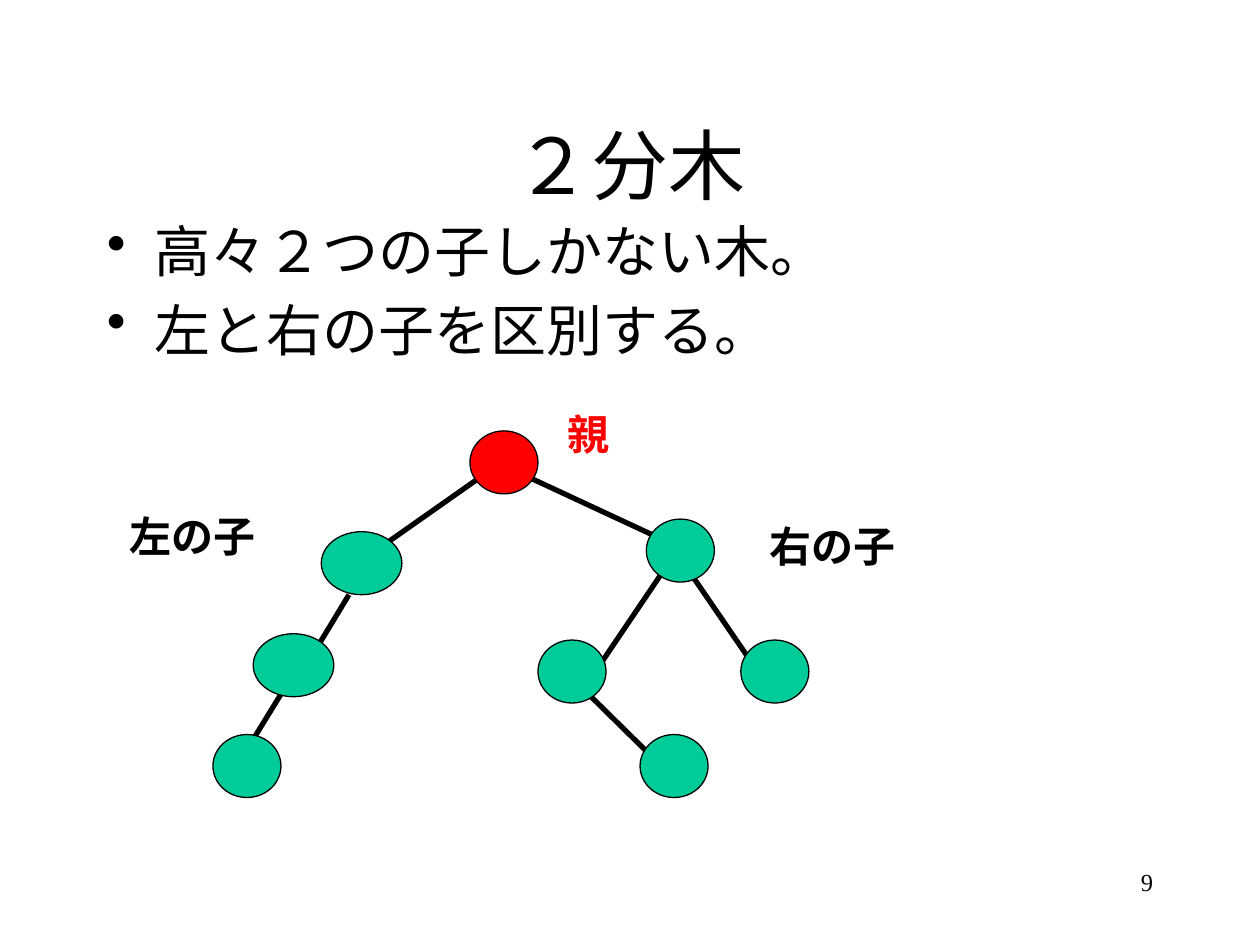
"""Build a slide that explains binary trees with a small example tree."""
from lxml.etree import SubElement
from pptx import Presentation
from pptx.dml.color import RGBColor
from pptx.enum.shapes import MSO_CONNECTOR, MSO_SHAPE
from pptx.enum.text import MSO_ANCHOR, PP_ALIGN
from pptx.oxml.ns import qn
from pptx.util import Inches, Pt

FONT = "Times New Roman"
BLACK, RED, GREEN = "000000", "FF0000", "00CC99"
NODE_HEIGHT, NARROW, WIDE = 0.5, 0.54, 0.64

TITLE = "２分木"
BULLETS = ["高々２つの子しかない木。", "左と右の子を区別する。"]
PAGE_NUMBER = "9"
NODES = [
    (3.73, 3.42, NARROW, RED),
    (2.55, 4.22, WIDE, GREEN),
    (5.13, 4.12, NARROW, GREEN),
    (2.01, 5.03, WIDE, GREEN),
    (1.69, 5.83, NARROW, GREEN),
    (4.27, 5.08, NARROW, GREEN),
    (5.88, 5.08, NARROW, GREEN),
    (5.08, 5.83, NARROW, GREEN),
]
EDGES = [
    (4.05, 3.62, 2.77, 4.52),
    (4.05, 3.72, 5.34, 4.32),
    (2.77, 4.72, 2.34, 5.43),
    (2.34, 5.33, 1.91, 6.03),
    (5.34, 4.42, 4.59, 5.53),
    (5.33, 4.33, 6.09, 5.44),
    (4.58, 5.42, 5.25, 6.08),
]
LABELS = [
    ("親", 4.4, 3.19, 0.54, RED),
    ("左の子", 0.92, 4, 1.21, BLACK),
    ("右の子", 6, 4.08, 1.21, BLACK),
]


def color(value):
    return RGBColor.from_string(value)


def add_text(slide, lines, box, size, align, text_color=BLACK, bold=False, wrap=True):
    shape = slide.shapes.add_textbox(*map(Inches, box))
    text_frame = shape.text_frame
    text_frame.word_wrap = wrap
    text_frame.text = "\n".join(lines)
    for paragraph in text_frame.paragraphs:
        paragraph.alignment = align
        for run in paragraph.runs:
            run.font.name = FONT
            run.font.size = Pt(size)
            run.font.bold = bold
            run.font.color.rgb = color(text_color)
    return text_frame


def add_bullets(text_frame):
    for index, paragraph in enumerate(text_frame.paragraphs):
        if index:
            paragraph.space_before = Pt(6.4)
        properties = paragraph._p.get_or_add_pPr()
        properties.set("marL", str(Inches(0.38)))
        properties.set("indent", str(Inches(-0.38)))
        SubElement(properties, qn("a:buChar"), char="•")


def add_edge(slide, points):
    connector = slide.shapes.add_connector(MSO_CONNECTOR.STRAIGHT, *map(Inches, points))
    connector.line.color.rgb = color(BLACK)
    connector.line.width = Pt(3)
    SubElement(connector._element.spPr, qn("a:effectLst"))


def add_node(slide, left, top, width, fill):
    box = (left, top, width, NODE_HEIGHT)
    shape = slide.shapes.add_shape(MSO_SHAPE.OVAL, *map(Inches, box))
    shape.shadow.inherit = False
    shape.fill.solid()
    shape.fill.fore_color.rgb = color(fill)
    shape.line.color.rgb = color(BLACK)
    shape.line.width = Pt(0.75)


def main():
    presentation = Presentation()
    presentation.slide_width, presentation.slide_height = Inches(10), Inches(7.5)
    slide = presentation.slides.add_slide(presentation.slide_layouts[6])

    add_text(slide, [PAGE_NUMBER], (7.17, 6.83, 2.08, 0.5), 14, PP_ALIGN.RIGHT)
    title = add_text(slide, [TITLE], (0.75, 0.67, 8.5, 1.25), 44, PP_ALIGN.CENTER)
    title.vertical_anchor = MSO_ANCHOR.MIDDLE
    add_bullets(add_text(slide, BULLETS, (0.75, 1.67, 8.5, 4.5), 32, PP_ALIGN.LEFT))

    for edge in EDGES:
        add_edge(slide, edge)
    for node in NODES:
        add_node(slide, *node)
    for text, left, top, width, text_color in LABELS:
        add_text(slide, [text], (left, top, width, 0.5), 24, PP_ALIGN.CENTER,
                 text_color, bold=True, wrap=False)

    presentation.save("out.pptx")


if __name__ == "__main__":
    main()
